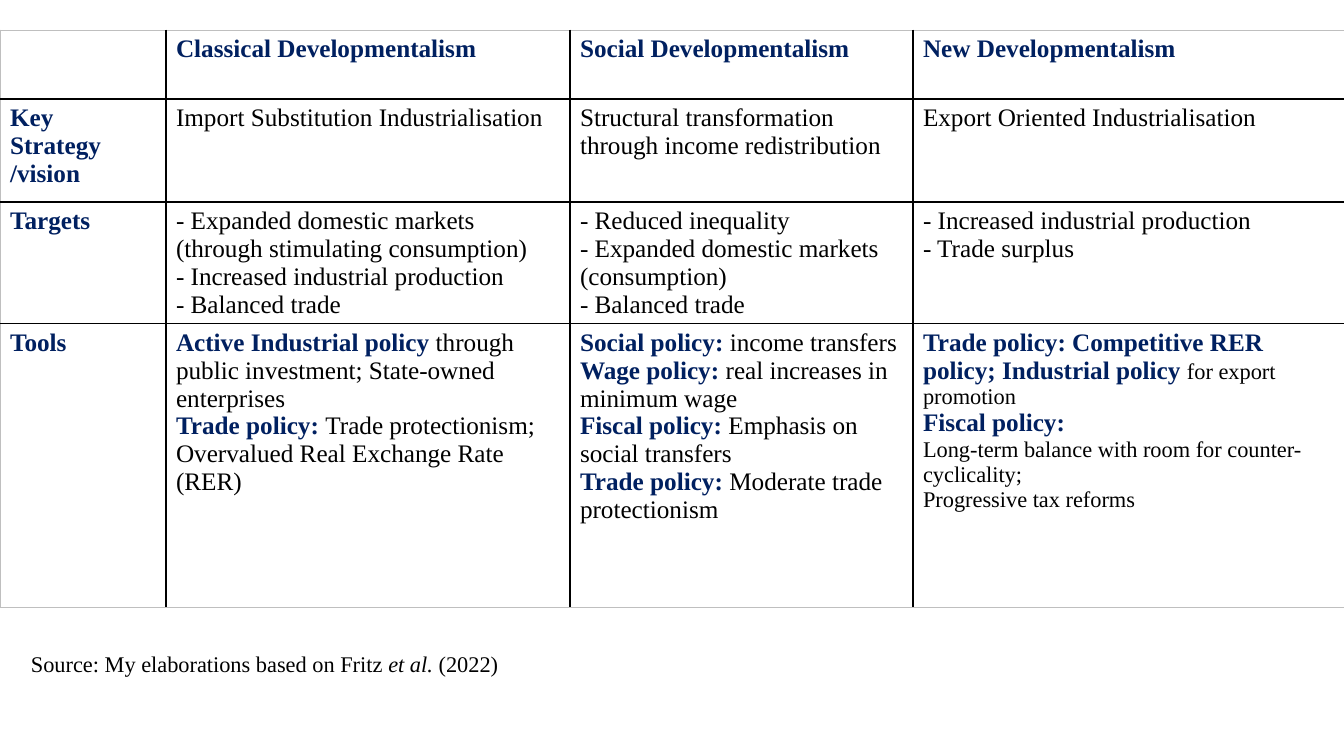
"""Builds a slide with a table comparing three kinds of developmentalism."""
from lxml import etree
from pptx import Presentation
from pptx.dml.color import RGBColor
from pptx.enum.text import MSO_ANCHOR
from pptx.oxml.ns import qn
from pptx.util import Pt

TOP = MSO_ANCHOR.TOP
PX = 914400 / 100.8
FONT = "Times New Roman"
NAVY = RGBColor(0x00, 0x20, 0x60)
BLACK = RGBColor(0x00, 0x00, 0x00)
WHITE = RGBColor(0xFF, 0xFF, 0xFF)
GREY = RGBColor(0xBF, 0xBF, 0xBF)

HEAD = {"size": 18, "color": NAVY, "bold": True}
BODY = {"size": 18, "color": BLACK}
SMALL = {"size": 16, "color": BLACK}
SMALL_ITALIC = {"size": 16, "color": BLACK, "italic": True}

COL_WIDTHS = [166, 404, 343, 431]
ROW_HEIGHTS = [69, 103, 121, 284]


def px(n):
    return round(n * PX)


def lines(style, *texts):
    return [[(text, style)] for text in texts]


def policy(label, detail, style=BODY):
    return [(label + " ", HEAD), (detail, style)]


ROWS = [
    [
        [],
        lines(HEAD, "Classical Developmentalism"),
        lines(HEAD, "Social Developmentalism"),
        lines(HEAD, "New Developmentalism"),
    ],
    [
        lines(HEAD, "Key", "Strategy", "/vision"),
        lines(BODY, "Import Substitution Industrialisation"),
        lines(BODY, "Structural transformation through income redistribution"),
        lines(BODY, "Export Oriented Industrialisation"),
    ],
    [
        lines(HEAD, "Targets"),
        lines(BODY, "- Expanded domestic markets (through stimulating consumption)",
              "- Increased industrial production", "- Balanced trade"),
        lines(BODY, "- Reduced inequality",
              "- Expanded domestic markets (consumption)", "- Balanced trade"),
        lines(BODY, "- Increased industrial production", "- Trade surplus"),
    ],
    [
        lines(HEAD, "Tools"),
        [
            policy("Active Industrial policy",
                   "through public investment; State-owned enterprises"),
            policy("Trade policy:",
                   "Trade protectionism; Overvalued Real Exchange Rate (RER)"),
        ],
        [
            policy("Social policy:", "income transfers"),
            policy("Wage policy:", "real increases in minimum wage"),
            policy("Fiscal policy:", "Emphasis on social transfers"),
            policy("Trade policy:", "Moderate trade protectionism"),
        ],
        [
            policy("Trade policy: Competitive RER policy; Industrial policy",
                   "for export promotion", SMALL),
            *lines(HEAD, "Fiscal policy:"),
            *lines(SMALL, "Long-term balance with room for counter-cyclicality;",
                   "Progressive tax reforms"),
        ],
    ],
]

SOURCE = [[
    ("Source: My elaborations based on Fritz ", SMALL),
    ("et al. ", SMALL_ITALIC),
    ("(2022)", SMALL),
]]


def add_run(p, text, size, color, bold=False, italic=False):
    r = p.add_run()
    r.text = text
    r.font.name = FONT
    r.font.size = Pt(size)
    r.font.bold = bold
    r.font.italic = italic
    r.font.color.rgb = color


def write(tf, paragraphs):
    tf.word_wrap = True
    for i, runs in enumerate(paragraphs):
        p = tf.add_paragraph() if i else tf.paragraphs[0]
        for text, style in runs:
            add_run(p, text, **style)


def set_borders(cell, outer_sides):
    tc_pr = cell._tc.get_or_add_tcPr()
    for i, side in enumerate(("L", "R", "T", "B")):
        color, width = (GREY, 0.5) if side in outer_sides else (BLACK, 1)
        ln = etree.Element(qn(f"a:ln{side}"), w=str(Pt(width)))
        fill = etree.SubElement(ln, qn("a:solidFill"))
        etree.SubElement(fill, qn("a:srgbClr"), val=str(color))
        tc_pr.insert(i, ln)


def add_comparison(slide):
    n_rows, n_cols = len(ROW_HEIGHTS), len(COL_WIDTHS)
    frame = slide.shapes.add_table(n_rows, n_cols, 0, px(30),
                                   px(sum(COL_WIDTHS)), px(sum(ROW_HEIGHTS)))
    table = frame.table
    table.first_row = table.horz_banding = False
    for col, width in zip(table.columns, COL_WIDTHS):
        col.width = px(width)
    for row, height in zip(table.rows, ROW_HEIGHTS):
        row.height = px(height)
    for i, row in enumerate(ROWS):
        for j, paragraphs in enumerate(row):
            cell = table.cell(i, j)
            cell.fill.solid()
            cell.fill.fore_color.rgb = WHITE
            cell.vertical_anchor = TOP
            write(cell.text_frame, paragraphs)
            edges = {"L": j == 0, "R": j == n_cols - 1,
                     "T": i == 0, "B": i == n_rows - 1}
            set_borders(cell, [side for side, outer in edges.items() if outer])


def add_source(slide):
    sp = slide.shapes.add_textbox(px(21), px(645), px(534), px(65))
    sp.fill.solid()
    sp.fill.fore_color.rgb = WHITE
    write(sp.text_frame, SOURCE)


def main():
    prs = Presentation()
    prs.slide_width, prs.slide_height = px(1344), px(756)
    slide = prs.slides.add_slide(prs.slide_layouts[6])
    add_comparison(slide)
    add_source(slide)
    prs.save("out.pptx")


if __name__ == "__main__":
    main()
